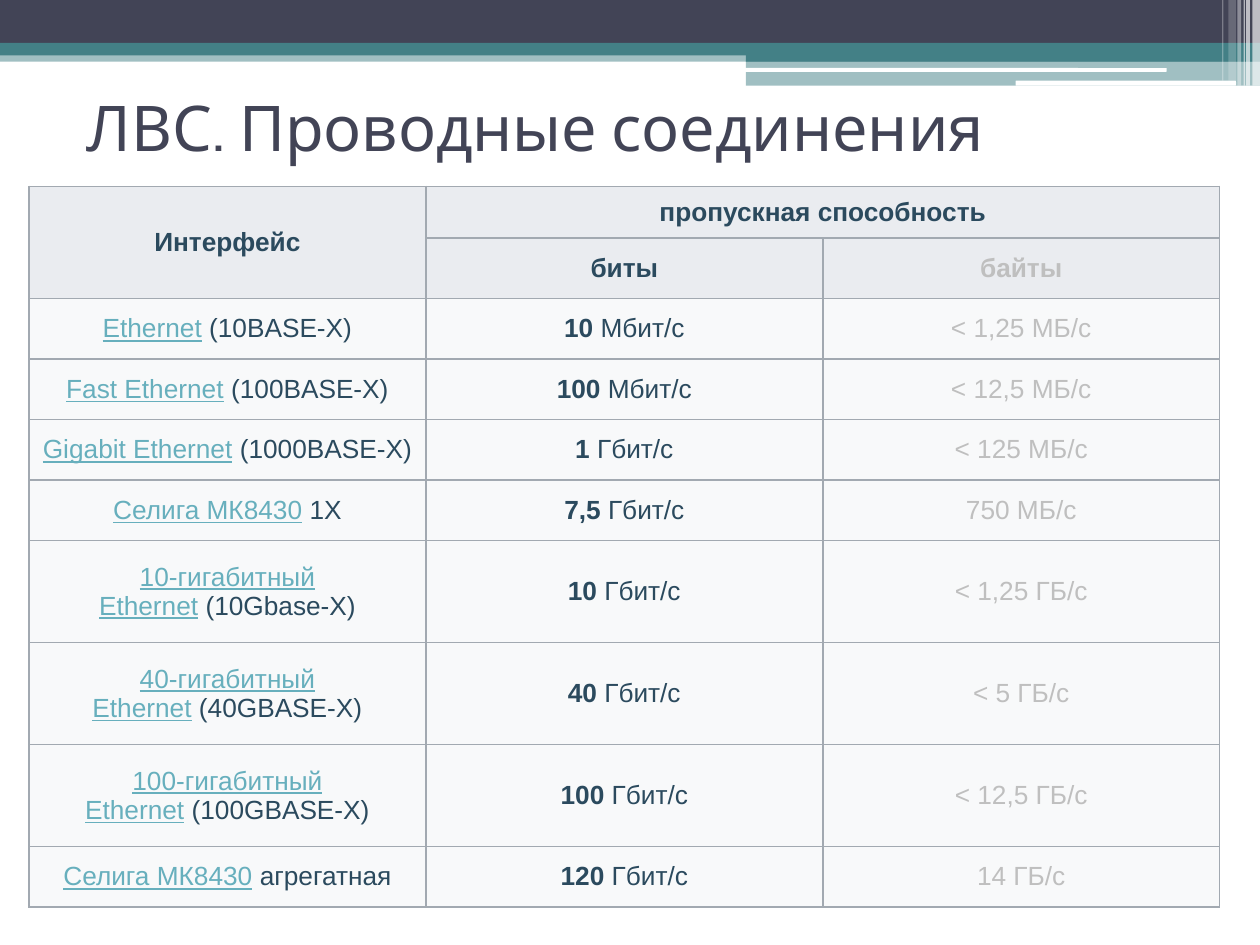
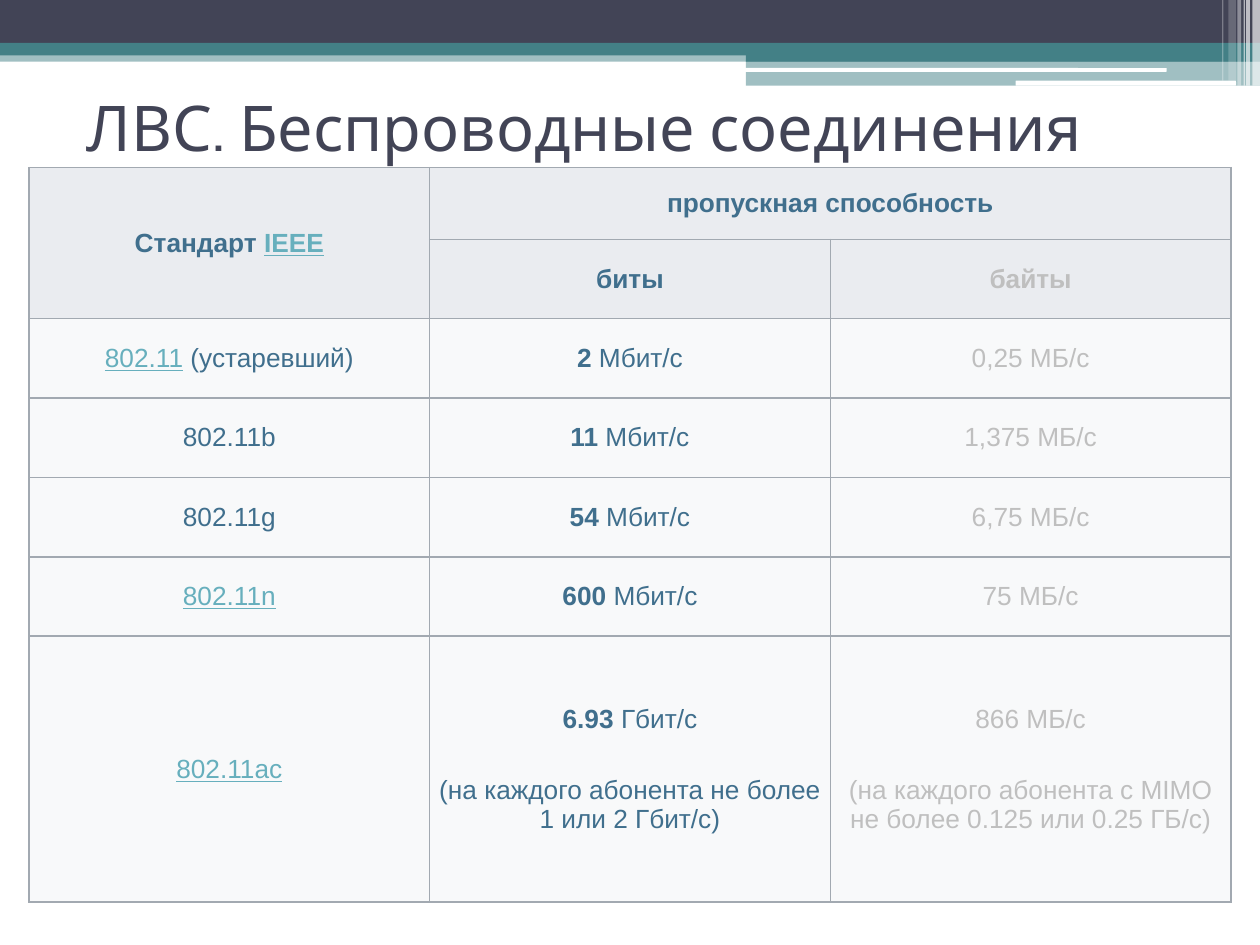
from lxml import etree
from pptx import Presentation
from pptx.dml.color import RGBColor
from pptx.enum import shapes, text
from pptx.oxml import ns
from pptx.util import Inches, Pt

DARK = RGBColor(0x42, 0x44, 0x56)
TEAL = RGBColor(0x43, 0x80, 0x86)
WHITE = RGBColor(0xFF, 0xFF, 0xFF)
NAVY = RGBColor(0x2B, 0x4A, 0x5E)
BLUE = RGBColor(0x40, 0x6F, 0x8D)
LINK = RGBColor(0x67, 0xAF, 0xBD)
GREY = RGBColor(0xBF, 0xBF, 0xBF)
EDGE = RGBColor(0xA2, 0xA9, 0xB1)
HEAD = RGBColor(0xEA, 0xEC, 0xF0)
BODY = RGBColor(0xF8, 0xF9, 0xFA)
RECT = shapes.MSO_SHAPE.RECTANGLE
ROUND = shapes.MSO_SHAPE.ROUNDED_RECTANGLE
GAP = chr(160)

BANDS = [
    (RECT, 0, 0.4, 10, 0.09, TEAL, 50),
    (RECT, 0, 0, 10, 0.34, DARK, 100),
    (RECT, 0, 0.34, 10, 0.1, TEAL, 100),
    (RECT, 5.92, 0.39, 4.08, 0.1, TEAL, 100),
    (RECT, 5.92, 0.48, 4.08, 0.2, TEAL, 50),
    (ROUND, 5.91, 0.54, 3.35, 0.03, WHITE, 100),
    (ROUND, 8.06, 0.64, 1.75, 0.04, WHITE, 100),
    (RECT, 9.94, 0, 0.06, 0.68, WHITE, 65),
    (RECT, 9.89, 0, 0.03, 0.68, WHITE, 65),
    (RECT, 9.87, 0, 0.01, 0.68, WHITE, 60),
    (RECT, 9.82, 0, 0.03, 0.68, WHITE, 40),
    (RECT, 9.75, 0, 0.06, 0.64, WHITE, 20),
    (RECT, 9.7, 0, 0.01, 0.64, WHITE, 30),
]

WIRED = [
    ("Ethernet", "(10BASE-X)", "10", "Мбит/c", "< 1,25 МБ/c"),
    ("Fast Ethernet", "(100BASE-X)", "100", "Мбит/c", "< 12,5 МБ/c"),
    ("Gigabit Ethernet", "(1000BASE-X)", "1", "Гбит/c", "< 125 МБ/c"),
    ("Селига МК8430", "1X", "7,5", "Гбит/c", "750 МБ/c"),
    ("10-гигабитный Ethernet", "(10Gbase-X)", "10", "Гбит/c", "< 1,25 ГБ/c"),
    ("40-гигабитный Ethernet", "(40GBASE-X)", "40", "Гбит/c", "< 5 ГБ/c"),
    ("100-гигабитный Ethernet", "(100GBASE-X)", "100", "Гбит/c", "< 12,5 ГБ/c"),
    ("Селига МК8430", "агрегатная", "120", "Гбит/c", "14 ГБ/c"),
]

RADIO = [
    ("802.11", "(устаревший)", "2", "Мбит/с", "0,25 МБ/c"),
    ("", "802.11b", "11", "Мбит/с", "1,375 МБ/c"),
    ("", "802.11g", "54", "Мбит/с", "6,75 МБ/c"),
    ("802.11n", "", "600", "Мбит/с", "75 МБ/c"),
    ("802.11ac", "", "6.93", "Гбит/с", "866 МБ/c"),
]
BITS_NOTE = "(на каждого абонента не более 1 или 2 Гбит/с)"
BYTES_NOTE = "(на каждого абонента c MIMO не более 0.125 или 0.25 ГБ/с)"


def add_band(slide, kind, left, top, width, height, color, alpha):
    band = slide.shapes.add_shape(
        kind, Inches(left), Inches(top), Inches(width), Inches(height))
    band.shadow.inherit = False
    band.line.fill.background()
    band.fill.solid()
    band.fill.fore_color.rgb = color
    if alpha < 100:
        tone = band.fill._xPr.find(".//" + ns.qn("a:srgbClr"))
        etree.SubElement(tone, ns.qn("a:alpha"), val=str(alpha * 1000))


def add_title(slide, words):
    box = slide.shapes.add_textbox(
        Inches(0.59), Inches(0.76), Inches(9), Inches(0.49))
    frame = box.text_frame
    frame.word_wrap = True
    frame.vertical_anchor = text.MSO_ANCHOR.MIDDLE
    para = frame.paragraphs[0]
    para.text = words
    para.font.name, para.font.size = "Cabin", Pt(36)
    para.font.color.rgb = DARK


def add_edges(cell):
    props = cell._tc.get_or_add_tcPr()
    for spot, side in enumerate("LRTB"):
        line = etree.Element(ns.qn("a:ln" + side), w=str(Pt(1)))
        fill = etree.SubElement(line, ns.qn("a:solidFill"))
        etree.SubElement(fill, ns.qn("a:srgbClr"), val=str(EDGE))
        props.insert(spot, line)


def style_cell(cell, color):
    cell.fill.solid()
    cell.fill.fore_color.rgb = color
    cell.vertical_anchor = text.MSO_ANCHOR.MIDDLE
    cell.margin_left = cell.margin_right = Inches(0.07)
    cell.margin_top = cell.margin_bottom = Inches(0.03)
    add_edges(cell)


def write(para, runs):
    para.alignment = text.PP_ALIGN.CENTER
    para.space_before = para.space_after = Pt(12)
    para.font.name, para.font.size = "Arial", Pt(15)
    for words, color, bold in runs:
        run = para.add_run()
        run.text = words
        run.font.color.rgb = color
        run.font.bold = bold
        run.font.underline = color == LINK


def add_note(cell, words, color):
    write(cell.text_frame.add_paragraph(), [(words, color, False)])


def name_runs(link, rest, ink):
    if link and rest:
        rest = GAP + rest
    return [run for run in ((link, LINK, False), (rest, ink, False)) if run[0]]


def add_grid(slide, top, width, heights, ink, corner, rows):
    grid = slide.shapes.add_table(
        len(heights), 3, Inches(0.23), Inches(top),
        Inches(3 * width), Inches(sum(heights))).table
    grid.first_row = grid.horz_banding = False
    for col in grid.columns:
        col.width = Inches(width)
    for row, height in zip(grid.rows, heights):
        row.height = Inches(height)
    lines = [
        [corner, [("пропускная способность", ink, True)], []],
        [[], [("биты", ink, True)], [("байты", GREY, True)]],
    ]
    for link, rest, count, unit, volume in rows:
        lines.append([
            name_runs(link, rest, ink),
            [(count + GAP, ink, True), (unit, ink, False)],
            [(volume, GREY, False)],
        ])
    for r, line in enumerate(lines):
        for c, runs in enumerate(line):
            cell = grid.cell(r, c)
            style_cell(cell, HEAD if r < 2 else BODY)
            if runs:
                write(cell.text_frame.paragraphs[0], runs)
    wide = grid.cell(0, 1)
    wide.margin_left = wide.margin_right = Inches(0.08)
    wide.margin_top = wide.margin_bottom = Inches(0.02)
    grid.cell(0, 0).merge(grid.cell(1, 0))
    wide.merge(grid.cell(0, 2))
    return grid


def add_page(deck, title):
    slide = deck.slides.add_slide(deck.slide_layouts[6])
    for band in BANDS:
        add_band(slide, *band)
    add_title(slide, title)
    return slide


def main():
    deck = Presentation()
    deck.slide_width, deck.slide_height = Inches(10), Inches(7.5)

    slide = add_page(deck, "ЛВС. Проводные соединения")
    add_grid(slide, 1.48, 3.15, [0.41] + [0.48] * 5 + [0.81] * 3 + [0.48],
             NAVY, [("Интерфейс", NAVY, True)], WIRED)

    slide = add_page(deck, "ЛВС. Беспроводные соединения")
    corner = [("Стандарт" + GAP, BLUE, True), ("IEEE", LINK, True)]
    grid = add_grid(slide, 1.33, 3.18, [0.57] + [0.63] * 5 + [2.11],
                    BLUE, corner, RADIO)
    add_note(grid.cell(6, 1), BITS_NOTE, BLUE)
    add_note(grid.cell(6, 2), BYTES_NOTE, GREY)

    deck.save("out.pptx")


if __name__ == "__main__":
    main()
